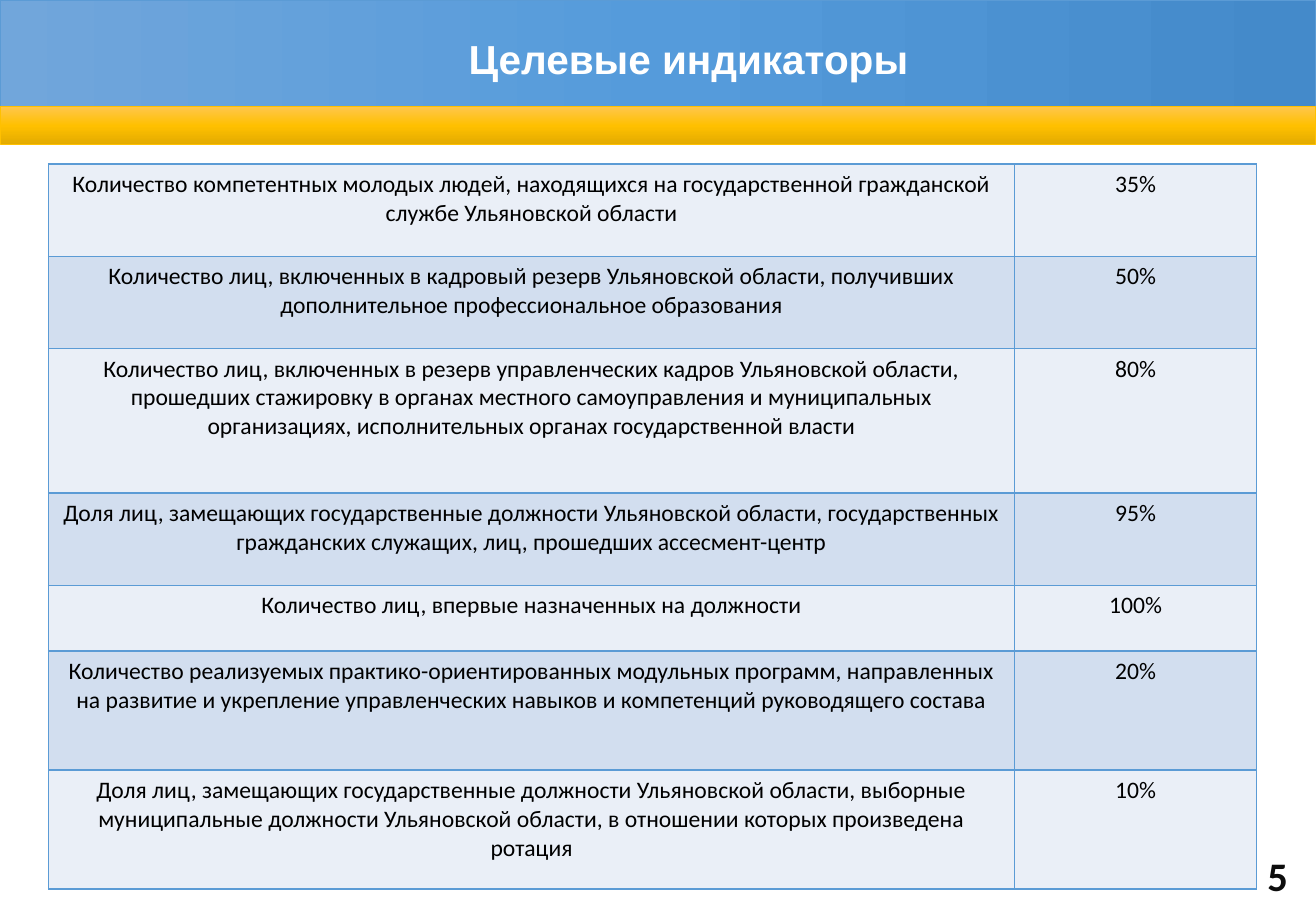
from dataclasses import dataclass

from lxml.etree import SubElement
from pptx import Presentation
from pptx.dml.color import RGBColor
from pptx.enum.shapes import MSO_SHAPE as Shape
from pptx.enum.text import MSO_ANCHOR as Anchor, MSO_AUTO_SIZE as AutoSize, PP_ALIGN as Align
from pptx.oxml.ns import qn
from pptx.util import Inches, Pt


@dataclass(frozen=True)
class Theme:
    heading_font: str = "Arial"
    body_font: str = "Calibri"
    heading_size: float = 24
    body_size: float = 14
    white: str = "FFFFFF"
    black: str = "000000"
    number: str = "0D0D0D"
    blue: str = "5B9BD5"
    gold: str = "FFC000"
    blue_gradient: tuple[str, ...] = ("71A6DB", "559BDB", "448ACA")
    gold_gradient: tuple[str, ...] = ("FFC64B", "FFC000", "E3AB00")
    row_fills: tuple[str, ...] = ("EAEFF7", "D2DEEF")


@dataclass(frozen=True)
class Band:
    top: float
    height: float
    colors: tuple[str, ...]
    angle: int
    line: str


@dataclass(frozen=True)
class Indicator:
    name: str
    value: str
    height: float


THEME = Theme()
WIDTH, HEIGHT = 10.83, 7.5
COLUMNS = (7.95, 1.99)

BANDS = (
    Band(0, 0.88, THEME.blue_gradient, 0, THEME.blue),
    Band(0.88, 0.31, THEME.gold_gradient, 90, THEME.gold),
)

INDICATORS = (
    Indicator("Количество компетентных молодых людей, находящихся на государственной "
              "гражданской службе Ульяновской области", "35%", 0.76),
    Indicator("Количество лиц, включенных в кадровый резерв Ульяновской области, "
              "получивших дополнительное профессиональное образования", "50%", 0.76),
    Indicator("Количество лиц, включенных в резерв управленческих кадров Ульяновской "
              "области, прошедших стажировку в органах местного самоуправления и "
              "муниципальных организациях, исполнительных органах государственной власти",
              "80%", 1.19),
    Indicator("Доля лиц, замещающих государственные должности Ульяновской области, "
              "государственных гражданских служащих, лиц, прошедших ассесмент-центр",
              "95%", 0.76),
    Indicator("Количество лиц, впервые назначенных на должности", "100%", 0.54),
    Indicator("Количество реализуемых практико-ориентированных модульных программ, "
              "направленных на развитие и укрепление управленческих навыков и "
              "компетенций руководящего состава", "20%", 0.98),
    Indicator("Доля лиц, замещающих государственные должности Ульяновской области, "
              "выборные муниципальные должности Ульяновской области, в отношении "
              "которых произведена ротация", "10%", 0.98),
)


def write_text(text_frame, text: str, font_name: str, size: float,
               color: str, bold: bool = False) -> None:
    text_frame.text = text
    paragraph = text_frame.paragraphs[0]
    paragraph.alignment = Align.CENTER
    font = paragraph.runs[0].font
    font.name, font.size, font.bold = font_name, Pt(size), bold
    font.color.rgb = RGBColor.from_string(color)


def add_band(slide, band: Band) -> None:
    shape = slide.shapes.add_shape(Shape.RECTANGLE, 0, Inches(band.top),
                                   Inches(WIDTH), Inches(band.height))
    shape.shadow.inherit = False
    shape.line.color.rgb = RGBColor.from_string(band.line)
    shape.line.width = Pt(0.5)
    # Three evenly spaced gradient stops
    shape.fill.gradient()
    shape.fill.gradient_angle = -band.angle % 360
    stops = shape.fill._fill._gradFill.find(qn("a:gsLst"))
    for stop in list(stops):
        stops.remove(stop)
    for index, color in enumerate(band.colors):
        stop = SubElement(stops, qn("a:gs"), pos=str(index * 50000))
        SubElement(stop, qn("a:srgbClr"), val=color)


def border_cell(cell, color: str) -> None:
    properties = cell._tc.get_or_add_tcPr()
    for index, side in enumerate(("a:lnL", "a:lnR", "a:lnT", "a:lnB")):
        line = properties.makeelement(qn(side), {"w": str(Pt(1))})
        fill = SubElement(line, qn("a:solidFill"))
        SubElement(fill, qn("a:srgbClr"), val=color)
        properties.insert(index, line)


def add_indicator_table(slide, indicators: tuple[Indicator, ...]) -> None:
    total_height = sum(indicator.height for indicator in indicators)
    table = slide.shapes.add_table(len(indicators), len(COLUMNS), Inches(0.4), Inches(1.35),
                                   Inches(sum(COLUMNS)), Inches(total_height)).table
    table.first_row = False
    for column, width in zip(table.columns, COLUMNS):
        column.width = Inches(width)
    for index, (row, indicator) in enumerate(zip(table.rows, indicators)):
        row.height = Inches(indicator.height)
        row_fill = THEME.row_fills[index % len(THEME.row_fills)]
        for cell, text in zip(row.cells, (indicator.name, indicator.value)):
            write_text(cell.text_frame, text, THEME.body_font, THEME.body_size, THEME.black)
            cell.fill.solid()
            cell.fill.fore_color.rgb = RGBColor.from_string(row_fill)
            border_cell(cell, THEME.blue)


def place_title(slide, text: str) -> None:
    title = slide.shapes.title
    title.left, title.top = Inches(0.1), Inches(0.2)
    title.width, title.height = Inches(10.73), Inches(0.53)
    text_frame = title.text_frame
    text_frame.auto_size = AutoSize.NONE
    text_frame.vertical_anchor = Anchor.TOP
    write_text(text_frame, text, THEME.heading_font, THEME.heading_size, THEME.white, True)
    paragraph = text_frame.paragraphs[0]
    paragraph.line_spacing = 1.07
    paragraph._p.get_or_add_pPr().set("indent", str(Inches(0.4)))
    # Bring the title in front of the bands
    slide.shapes._spTree.append(title._element)


def add_page_number(slide, number: str) -> None:
    box = slide.shapes.add_textbox(Inches(10.33), Inches(6.96), Inches(0.37), Inches(0.5))
    box.text_frame.word_wrap = False
    write_text(box.text_frame, number, THEME.body_font, THEME.heading_size, THEME.number, True)


def main() -> None:
    presentation = Presentation()
    presentation.slide_width, presentation.slide_height = Inches(WIDTH), Inches(HEIGHT)
    slide = presentation.slides.add_slide(presentation.slide_layouts[5])

    # Indicators
    add_indicator_table(slide, INDICATORS)

    # Header
    for band in BANDS:
        add_band(slide, band)
    place_title(slide, "Целевые индикаторы")

    # Page number
    add_page_number(slide, "5")
    presentation.save("out.pptx")


if __name__ == "__main__":
    main()
